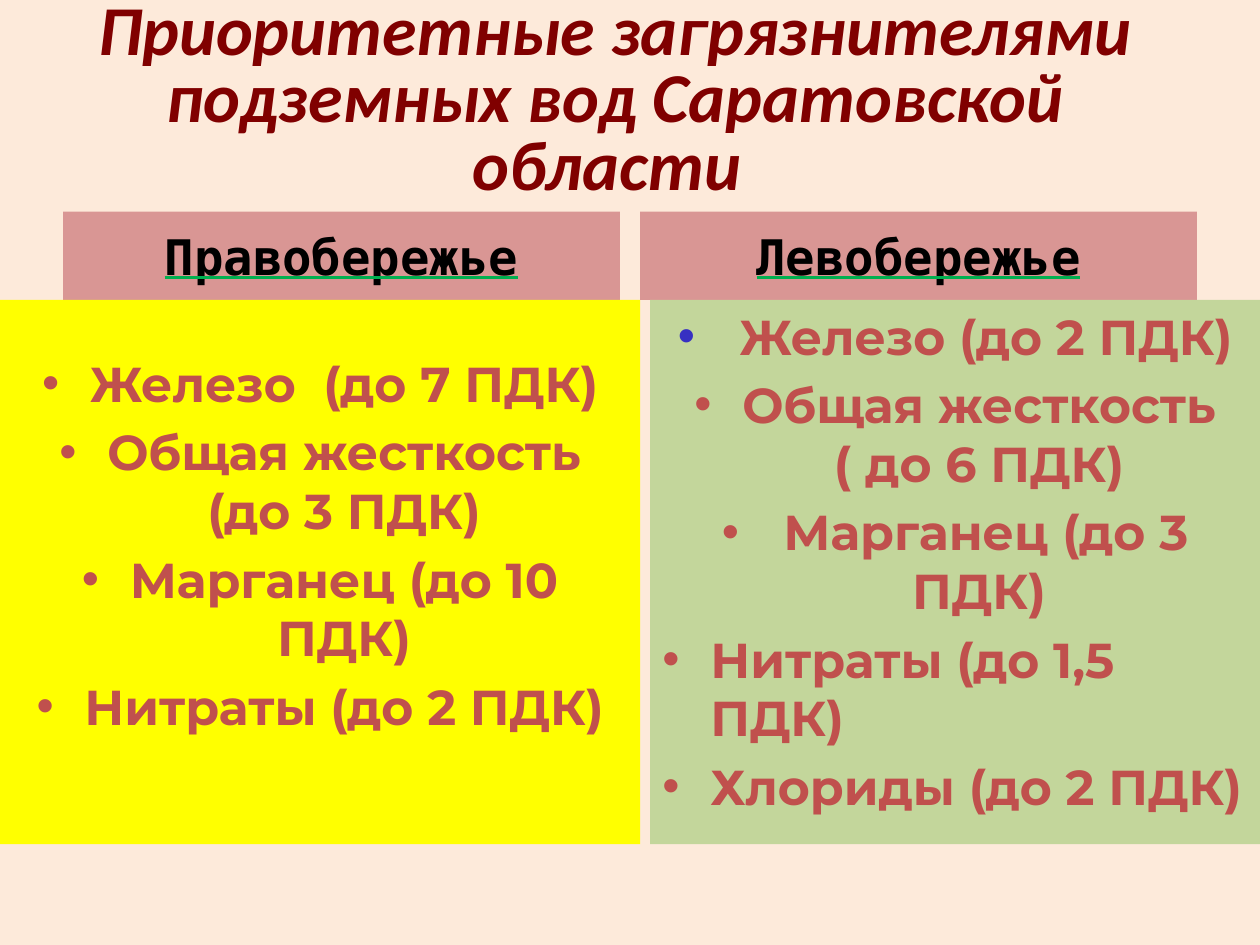
from lxml import etree
from pptx import Presentation
from pptx import util as u
from pptx.dml.color import RGBColor
from pptx.enum import shapes, text
from pptx.oxml.ns import qn

COLORS = {
    "background": "FDEADA", "title": "800000", "header": "D99694",
    "header text": "000000", "underline": "00B050", "item": "C0504D",
    "first bullet": "3730C2", "yellow": "FFFF00", "green": "C3D69B",
}
CENTER, LEFT = text.PP_ALIGN.CENTER, text.PP_ALIGN.LEFT
MIDDLE, TOP = text.MSO_ANCHOR.MIDDLE, text.MSO_ANCHOR.TOP

TITLE = "Приоритетные загрязнителями подземных вод Саратовской области "
BANKS = [
    {
        "name": "Правобережье", "header left": 0.5, "left": 0, "width": 5.08,
        "fill": "yellow", "bullet": "item",
        "frame": {"vertical_anchor": MIDDLE, "margin_bottom": u.Inches(0.49)},
        "items": [
            ("Железо  (до 7 ПДК)", CENTER),
            ("Общая жесткость (до 3 ПДК)", CENTER),
            ("Марганец (до 10 ПДК)", CENTER),
            ("Нитраты (до 2 ПДК)", CENTER),
        ],
    },
    {
        "name": "Левобережье", "header left": 5.08, "left": 5.16, "width": 4.84,
        "fill": "green", "bullet": "first bullet",
        "frame": {"vertical_anchor": TOP},
        "items": [
            (" Железо (до 2 ПДК)", CENTER),
            ("Общая жесткость ( до 6 ПДК)", CENTER),
            (" Марганец (до 3 ПДК)", CENTER),
            ("Нитраты (до 1,5 ПДК)", LEFT),
            ("Хлориды (до 2 ПДК)", LEFT),
        ],
    },
]
HEADER_TOP, HEADER_WIDTH, HEADER_HEIGHT = 1.68, 4.42, 0.7
PANEL_TOP, PANEL_HEIGHT = HEADER_TOP + HEADER_HEIGHT, 4.32


def rgb(name):
    return RGBColor.from_string(COLORS[name])


def set_all(target, values):
    for name, value in values.items():
        setattr(target, name, value)


def add_span(para, content, color, **font):
    span = para.add_run()
    span.text = content
    set_all(span.font, {"bold": True, **font})
    span.font.color.rgb = rgb(color)
    return span


def add_color(parent, tag, color):
    holder = etree.SubElement(parent, qn(tag))
    etree.SubElement(holder, qn("a:srgbClr"), val=COLORS[color])
    return holder


def add_box(page, place, fill, **frame):
    box = page.shapes.add_shape(shapes.MSO_SHAPE.RECTANGLE, *map(u.Inches, place))
    box.shadow.inherit = False
    box.fill.solid()
    box.fill.fore_color.rgb = rgb(fill)
    box.line.fill.background()
    set_all(box.text_frame, {"word_wrap": True, **frame})
    return box


def add_header(page, bank):
    place = bank["header left"], HEADER_TOP, HEADER_WIDTH, HEADER_HEIGHT
    para = add_box(page, place, "header", vertical_anchor=MIDDLE).text_frame.paragraphs[0]
    para.alignment = CENTER
    span = add_span(para, bank["name"], "header text", name="DejaVu Sans Mono",
                    size=u.Pt(28), underline=True)
    line = etree.Element(qn("a:uFill"))
    add_color(line, "a:solidFill", "underline")
    span.font._element.find(qn("a:latin")).addprevious(line)


def add_bullet(para, color):
    properties = para._p.get_or_add_pPr()
    properties.set("marL", str(u.Inches(0.38)))
    properties.set("indent", str(u.Inches(-0.38)))
    bullet = etree.SubElement(properties, qn("a:buClr"))
    etree.SubElement(bullet, qn("a:srgbClr"), val=COLORS[color])
    etree.SubElement(properties, qn("a:buFont"), typeface="Arial")
    etree.SubElement(properties, qn("a:buChar"), char="•")


def add_panel(page, bank):
    place = bank["left"], PANEL_TOP, bank["width"], PANEL_HEIGHT
    frame = add_box(page, place, bank["fill"], **bank["frame"]).text_frame
    for index, (content, alignment) in enumerate(bank["items"]):
        para = frame.add_paragraph() if index else frame.paragraphs[0]
        para.alignment = alignment
        if index:
            para.space_before = u.Pt(5.5)
        add_bullet(para, "item" if index else bank["bullet"])
        add_span(para, content, "item", name="Montserrat", size=u.Pt(28))


def format_title(title):
    set_all(title, dict(zip(("left", "top", "width", "height"),
                            map(u.Inches, (0.23, 0.3, 9.3, 1.03)))))
    set_all(title.text_frame, {"word_wrap": True, "vertical_anchor": MIDDLE,
                               "auto_size": text.MSO_AUTO_SIZE.NONE})
    para = title.text_frame.paragraphs[0]
    set_all(para, {"alignment": CENTER, "line_spacing": 0.8, "space_after": u.Pt(1)})
    add_span(para, TITLE, "title", name="Calibri", size=u.Pt(40), italic=True)


def main():
    deck = Presentation()
    deck.slide_width, deck.slide_height = u.Inches(10), u.Inches(7.5)
    page = deck.slides.add_slide(deck.slide_layouts[5])
    page.background.fill.solid()
    page.background.fill.fore_color.rgb = rgb("background")
    format_title(page.shapes.title)
    for bank in BANKS:
        add_header(page, bank)
        add_panel(page, bank)
    deck.save("out.pptx")


if __name__ == "__main__":
    main()
